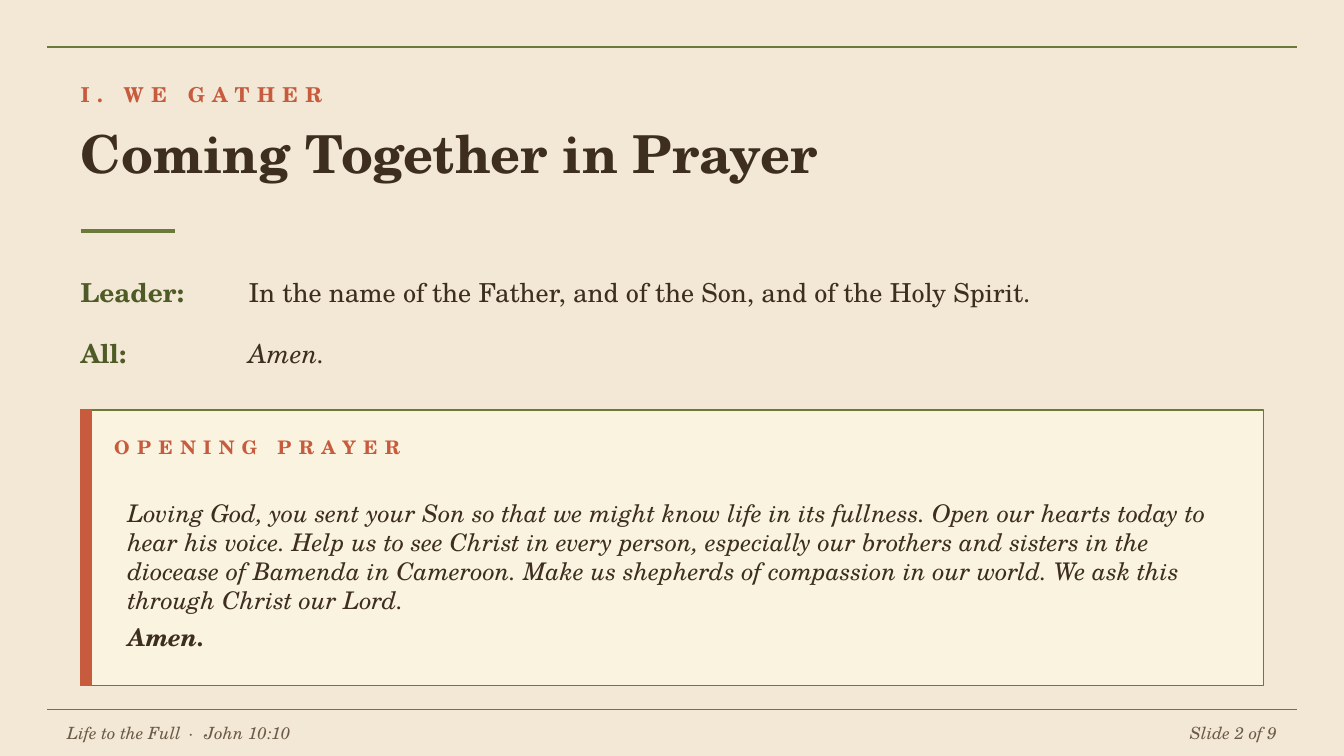
from lxml import etree
from pptx import Presentation
from pptx.dml.color import RGBColor
from pptx.enum import shapes, text
from pptx.oxml import ns
from pptx.util import Pt

FONT = "TeX Gyre Schola"
COLORS = {
    "paper": "F2E8D5",
    "card": "FAF3E0",
    "olive": "6B7A3A",
    "leaf": "4F5B26",
    "clay": "C75B3E",
    "ink": "3D2E1F",
    "muted": "6B5A45",
}


def rgb(name):
    return RGBColor.from_string(COLORS[name])


def add_run(p, words, size, color, spacing=0, **formats):
    r = p.add_run()
    r.text = words
    for name, value in {"name": FONT, "size": Pt(size), **formats}.items():
        setattr(r.font, name, value)
    r.font.color.rgb = rgb(color)
    if spacing:
        r._r.get_or_add_rPr().set("spc", str(round(spacing * 100)))


def add_text(s, box, paragraphs, anchor=text.MSO_ANCHOR.MIDDLE, align=None, after=None):
    tf = s.shapes.add_textbox(*map(Pt, box)).text_frame
    formats = {"word_wrap": True, "vertical_anchor": anchor, "margin_left": 0,
               "margin_top": 0, "margin_right": 0, "margin_bottom": 0}
    for name, value in formats.items():
        setattr(tf, name, value)
    for i, runs in enumerate(paragraphs):
        p = tf.add_paragraph() if i else tf.paragraphs[0]
        if align is not None:
            p.alignment = align
        if after is not None:
            p.space_after = Pt(after)
        for run in runs:
            add_run(p, **run)


def add_rule(s, x, y, width, weight):
    line = s.shapes.add_connector(shapes.MSO_CONNECTOR.STRAIGHT, Pt(x), Pt(y), Pt(x + width), Pt(y))
    line.line.color.rgb = rgb("olive")
    line.line.width = Pt(weight)
    etree.SubElement(line._element.spPr, ns.qn("a:effectLst"))


def add_panel(s, box, fill, outline, weight):
    sp = s.shapes.add_shape(shapes.MSO_SHAPE.RECTANGLE, *map(Pt, box))
    sp.shadow.inherit = False
    sp.fill.solid()
    sp.fill.fore_color.rgb = rgb(fill)
    sp.line.color.rgb = rgb(outline)
    sp.line.width = Pt(weight)


def frame(s, x, y, width, height):
    for rule_y in (y, y + height):
        add_rule(s, x, rule_y, width, 0.75)


def heading(s, x, y, width, height):
    add_text(s, (x, y, 432, 21.6),
             [[dict(words="I. WE GATHER", size=11, color="clay", bold=True, spacing=4)]])
    add_text(s, (x, y + 25.2, width, 43.2),
             [[dict(words="Coming Together in Prayer", size=28, color="ink", bold=True)]],
             anchor=text.MSO_ANCHOR.TOP)
    add_rule(s, x, y + height, 50.4, 2.25)


def responses(s, x, y, width, height):
    lines = [
        ("Leader:", "In the name of the Father, and of the Son, and of the Holy Spirit.", False),
        ("All:", "Amen.", True),
    ]
    row_height, indent = 25.2, 90
    pitch = (height - row_height) / (len(lines) - 1)
    for i, (speaker, words, italic) in enumerate(lines):
        top = y + i * pitch
        add_text(s, (x, top, 86.4, row_height),
                 [[dict(words=speaker, size=14, color="leaf", bold=True)]])
        add_text(s, (x + indent, top, width - indent, row_height),
                 [[dict(words=words, size=14, color="ink", italic=italic)]])


def prayer_card(s, x, y, width, height):
    add_panel(s, (x, y, width, height), "card", "olive", 0.75)
    add_panel(s, (x, y, 5.76, height), "clay", "clay", 1)
    add_text(s, (x + 18, y + 9.36, 360, 21.6),
             [[dict(words="OPENING PRAYER", size=10, color="clay", bold=True, spacing=4)]])
    prayer = (
        "Loving God, you sent your Son so that we might know life in its fullness. "
        "Open our hearts today to hear his voice. Help us to see Christ in every person, "
        "especially our brothers and sisters in the diocease of Bamenda in Cameroon. "
        "Make us shepherds of compassion in our world. We ask this through Christ our Lord."
    )
    style = dict(size=13, color="ink", italic=True)
    add_text(s, (x + 25.2, y + 32.4, width - 36, height - 36),
             [[dict(words=prayer, **style)], [dict(words="Amen.", bold=True, **style)]], after=4)


def footer(s, x, y, width, height):
    style = dict(size=9, color="muted", italic=True)
    add_text(s, (x, y, 360, height),
             [[dict(words="Life to the Full", **style),
               dict(words=" · ", spacing=1.67, **style),
               dict(words="John 10:10", **style)]])
    add_text(s, (x + width - 345.6, y, 345.6, height),
             [[dict(words="Slide 2 of 9", **style)]], align=text.PP_ALIGN.RIGHT)


def main():
    prs = Presentation()
    prs.slide_width, prs.slide_height = Pt(720), Pt(405)
    s = prs.slides.add_slide(prs.slide_layouts[6])
    s.background.fill.solid()
    s.background.fill.fore_color.rgb = rgb("paper")
    frame(s, 25.2, 25.2, 669.6, 354.96)
    heading(s, 43.2, 39.6, 633.6, 84.24)
    responses(s, 43.2, 144, 630, 57.6)
    prayer_card(s, 43.2, 219.6, 633.6, 147.6)
    footer(s, 36, 383.76, 648, 18)
    prs.save("out.pptx")


if __name__ == "__main__":
    main()
